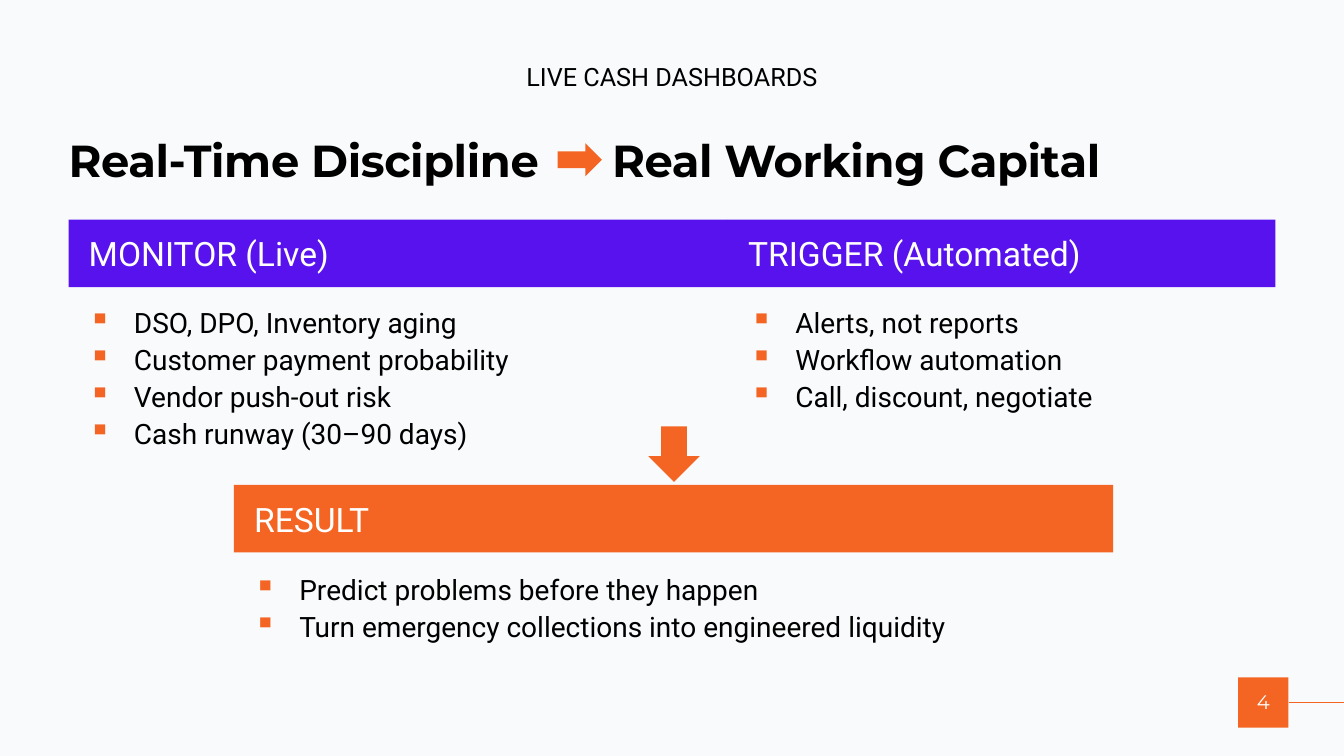
from dataclasses import dataclass

from lxml.etree import SubElement
from pptx import Presentation
from pptx.dml.color import RGBColor
from pptx.enum.shapes import MSO_CONNECTOR as Connector
from pptx.enum.shapes import MSO_SHAPE as Preset
from pptx.enum.text import MSO_ANCHOR as Anchor
from pptx.enum.text import MSO_AUTO_SIZE as AutoSize
from pptx.enum.text import PP_ALIGN as Align
from pptx.oxml.ns import qn
from pptx.util import Inches, Pt

COLORS = {
    "background": "F8FAFC",
    "orange": "F46524",
    "violet": "5712EE",
    "black": "000000",
    "white": "FFFFFF",
}
BODY_FONT = "Roboto"
HEADING_FONT = "Montserrat"
BAR_HEIGHT = 0.67
BULLET_INDENT = 0.45
TITLE_TAB = 5.39


@dataclass(frozen=True)
class Area:
    left: float
    top: float
    width: float
    height: float

    def lengths(self):
        return [Inches(side) for side in (self.left, self.top, self.width, self.height)]


@dataclass(frozen=True)
class Style:
    size: float
    color: str
    font: str = BODY_FONT
    bold: bool = False


@dataclass(frozen=True)
class Section:
    heading: str
    color: str
    bar: Area
    body: Area
    points: tuple[str, ...]


HEADING = Style(24, "white")
POINT = Style(20, "black")

SECTIONS = (
    Section("TRIGGER (Automated)", "violet",
            Area(7.22, 2.18, 5.43, BAR_HEIGHT), Area(7.34, 2.95, 5.31, 1.19),
            ("Alerts, not reports", "Workflow automation", "Call, discount, negotiate")),
    Section("MONITOR (Live)", "violet",
            Area(0.68, 2.18, 6.54, BAR_HEIGHT), Area(0.78, 2.95, 5.58, 1.56),
            ("DSO, DPO, Inventory aging", "Customer payment probability",
             "Vendor push-out risk", "Cash runway (30–90 days)")),
    Section("RESULT", "orange",
            Area(2.32, 4.81, 8.72, BAR_HEIGHT), Area(2.42, 5.6, 8.72, 0.82),
            ("Predict problems before they happen",
             "Turn emergency collections into engineered liquidity")),
)


def rgb(name: str) -> RGBColor:
    return RGBColor.from_string(COLORS[name])


def apply_style(para, style: Style) -> None:
    font = para.font
    font.size = Pt(style.size)
    font.name = style.font
    font.bold = style.bold
    font.color.rgb = rgb(style.color)


def add_block(slide, preset, area: Area, color: str, rotation: float = 0):
    block = slide.shapes.add_shape(preset, *area.lengths())
    block.shadow.inherit = False
    block.fill.solid()
    block.fill.fore_color.rgb = rgb(color)
    block.line.fill.background()
    block.rotation = rotation
    return block


def add_text(slide, area: Area, text: str, style: Style, align=Align.LEFT, grow: bool = True):
    box = slide.shapes.add_textbox(*area.lengths())
    frame = box.text_frame
    frame.word_wrap = True
    if grow:
        frame.auto_size = AutoSize.SHAPE_TO_FIT_TEXT
    frame.text = text
    for para in frame.paragraphs:
        para.alignment = align
        apply_style(para, style)
    return box


def add_bullet(para) -> None:
    para.line_spacing = 1.1
    properties = para._p.get_or_add_pPr()
    properties.set("marL", str(Inches(BULLET_INDENT)))
    properties.set("indent", str(-Inches(BULLET_INDENT)))
    color = SubElement(properties, qn("a:buClr"))
    SubElement(color, qn("a:srgbClr"), val=COLORS["orange"])
    SubElement(properties, qn("a:buSzPct"), val="110000")
    SubElement(properties, qn("a:buChar"), char="▪")


def add_section(slide, section: Section) -> None:
    bar = add_block(slide, Preset.RECTANGLE, section.bar, section.color)
    frame = bar.text_frame
    frame.margin_left = Inches(0.2)
    frame.vertical_anchor = Anchor.MIDDLE
    frame.text = section.heading
    heading = frame.paragraphs[0]
    heading.alignment = Align.LEFT
    apply_style(heading, HEADING)

    box = slide.shapes.add_textbox(*section.body.lengths())
    box.text_frame.word_wrap = True
    box.text_frame.auto_size = AutoSize.SHAPE_TO_FIT_TEXT
    box.text_frame.text = "\n".join(section.points)
    for para in box.text_frame.paragraphs:
        add_bullet(para)
        apply_style(para, POINT)


def add_title(slide) -> None:
    box = add_text(slide, Area(0.68, 1.12, 11.89, 0.94),
                   "Real-Time Discipline\tReal Working Capital",
                   Style(32, "black", HEADING_FONT, True))
    frame = box.text_frame
    frame.margin_left = 0
    frame.margin_top = frame.margin_bottom = Inches(0.2)
    properties = frame.paragraphs[0]._p.get_or_add_pPr()
    defaults = properties.find(qn("a:defRPr"))
    defaults.set("spc", "-30")
    tabs = SubElement(properties, qn("a:tabLst"))
    SubElement(tabs, qn("a:tab"), pos=str(Inches(TITLE_TAB)), algn="l")
    defaults.addprevious(tabs)


def add_page_number(slide) -> None:
    badge = add_block(slide, Preset.RECTANGLE, Area(12.28, 6.72, 0.5, 0.5), "orange")
    rule = slide.shapes.add_connector(
        Connector.STRAIGHT, Inches(13.33), Inches(6.97), Inches(12.78), Inches(6.97))
    rule.end_connect(badge, 3)
    rule.line.color.rgb = rgb("orange")
    rule.line.width = Pt(0.5)
    SubElement(rule._element.spPr, qn("a:effectLst"))
    number = add_text(slide, Area(12.3, 6.76, 0.46, 0.4), "4",
                      Style(14, "white", HEADING_FONT), Align.CENTER, grow=False)
    number.text_frame.vertical_anchor = Anchor.MIDDLE


def main() -> None:
    deck = Presentation()
    deck.slide_width = Inches(13.33)
    deck.slide_height = Inches(7.5)
    slide = deck.slides.add_slide(deck.slide_layouts[6])
    slide.background.fill.solid()
    slide.background.fill.fore_color.rgb = rgb("background")

    add_page_number(slide)
    add_text(slide, Area(3.33, 0.56, 6.67, 0.4), "LIVE CASH DASHBOARDS",
             Style(18, "black"), Align.CENTER)
    add_title(slide)
    for section in SECTIONS:
        add_section(slide, section)
    add_block(slide, Preset.RIGHT_ARROW, Area(5.53, 1.42, 0.44, 0.33), "orange")
    add_block(slide, Preset.RIGHT_ARROW, Area(6.41, 4.25, 0.55, 0.51), "orange", 90)

    deck.save("out.pptx")


if __name__ == "__main__":
    main()
